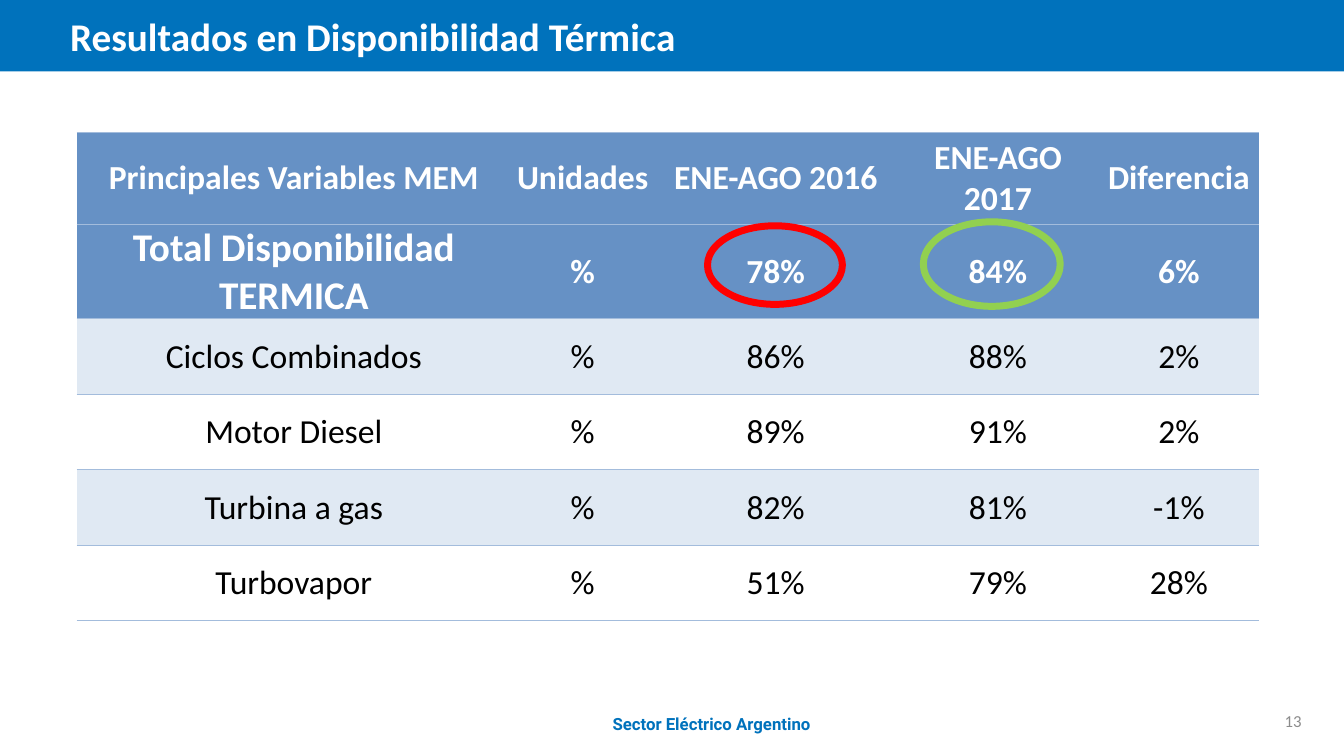
from lxml import etree
from pptx import Presentation
from pptx.dml.color import RGBColor
from pptx.enum import shapes, text
from pptx.oxml import ns
from pptx.util import Cm, Pt

HUES = {
    "blue": "0072BC", "head": "6691C5", "band": "E0E9F3", "rule": "A3BCDC",
    "white": "FFFFFF", "black": "000000", "gray": "8C8C8C",
    "red": "FF0000", "green": "92D050",
}
LEFT, MID, RIGHT = text.PP_ALIGN.LEFT, text.PP_ALIGN.CENTER, text.PP_ALIGN.RIGHT


def hue(name):
    return RGBColor.from_string(HUES[name])


class Deck:
    """Holds the style and the current slide; lengths are in cm."""

    def __init__(self, wide, high, face="Calibri"):
        self.prs = Presentation()
        self.prs.slide_width, self.prs.slide_height = Cm(wide), Cm(high)
        self.slide = self.prs.slides.add_slide(self.prs.slide_layouts[6])
        self.face = face

    def style(self, para, size, color, bold=False, align=LEFT, face=None):
        para.alignment = align
        font = para.font
        font.name, font.size, font.bold = face or self.face, Pt(size), bold
        font.color.rgb = hue(color)

    def shape(self, kind, box, fill=None, line=None, width=5):
        item = self.slide.shapes.add_shape(kind, *map(Cm, box))
        item.shadow.inherit = False
        if fill:
            item.fill.solid()
            item.fill.fore_color.rgb = hue(fill)
        else:
            item.fill.background()
        if line:
            item.line.color.rgb = hue(line)
            item.line.width = Pt(width)
        else:
            item.line.fill.background()

    def label(self, words, box, size, color, **look):
        frame = self.slide.shapes.add_textbox(*map(Cm, box)).text_frame
        frame.word_wrap = True
        frame.vertical_anchor = text.MSO_ANCHOR.MIDDLE
        para = frame.paragraphs[0]
        para.text = words
        self.style(para, size, color, **look)

    def rules(self, cell):
        """Thin rules above and below the cell, none at its sides."""
        props = cell._tc.get_or_add_tcPr()
        for spot, tag in enumerate(("lnL", "lnR", "lnT", "lnB")):
            line = etree.Element(ns.qn("a:" + tag), w=str(Pt(0.5)))
            if tag in ("lnT", "lnB"):
                fill = etree.SubElement(line, ns.qn("a:solidFill"))
                etree.SubElement(fill, ns.qn("a:srgbClr"), val=HUES["rule"])
            else:
                etree.SubElement(line, ns.qn("a:noFill"))
            props.insert(spot, line)

    def cell(self, cell, words, size, color, fill, bold):
        cell.text = words
        cell.vertical_anchor = text.MSO_ANCHOR.MIDDLE
        cell.margin_left = cell.margin_right = cell.margin_top = Cm(0.02)
        cell.margin_bottom = 0
        if fill:
            cell.fill.solid()
            cell.fill.fore_color.rgb = hue(fill)
        else:
            cell.fill.background()
        self.rules(cell)
        self.style(cell.text_frame.paragraphs[0], size, color, bold, MID)

    def table(self, left, top, cols, highs, rows):
        grid = self.slide.shapes.add_table(
            len(rows), len(cols), Cm(left), Cm(top),
            Cm(sum(cols)), Cm(sum(highs))).table
        for col, wide in zip(grid.columns, cols):
            col.width = Cm(wide)
        for r, (row, high) in enumerate(zip(rows, highs)):
            grid.rows[r].height = Cm(high)
            top_row = r < 2
            fill = "head" if top_row else "band" if r % 2 == 0 else None
            for c, words in enumerate(row):
                size = 28 if (r, c) == (1, 0) else 24
                self.cell(grid.cell(r, c), words, size,
                          "white" if top_row else "black", fill, top_row)


def main():
    deck = Deck(33.87, 19.05)

    # Title bar
    deck.shape(shapes.MSO_SHAPE.RECTANGLE, (0, 0, 33.87, 1.8), fill="blue")
    deck.label("Resultados en Disponibilidad Térmica", (1.52, 0, 24.2, 1.8),
               28, "white", bold=True)

    # Availability table
    data = [
        ("Total Disponibilidad TERMICA", "78%", "84%", "6%"),
        ("Ciclos Combinados", "86%", "88%", "2%"),
        ("Motor Diesel", "89%", "91%", "2%"),
        ("Turbina a gas", "82%", "81%", "-1%"),
        ("Turbovapor", "51%", "79%", "28%"),
    ]
    head = ("Principales Variables MEM", "Unidades", "ENE-AGO 2016",
            "ENE-AGO 2017", "Diferencia")
    rows = [head] + [(name, "%", *vals) for name, *vals in data]
    deck.table(1.93, 3.33, (10.95, 3.61, 6.12, 5.08, 4.04),
               [2.31] + [1.9] * len(data), rows)

    # Rings around the totals
    for box, color in (((17.83, 5.69, 3.4, 1.98), "red"),
                       ((23.27, 5.59, 3.45, 2.13), "green")):
        deck.shape(shapes.MSO_SHAPE.OVAL, box, line=color)

    # Footer
    deck.label("Sector Eléctrico Argentino", (8.74, 17.53, 18.39, 1.4),
               12, "blue", bold=True, align=MID, face="Roboto")
    deck.label("13", (25.43, 17.65, 7.62, 1.02), 12, "gray", align=RIGHT)

    deck.prs.save("out.pptx")


if __name__ == "__main__":
    main()
